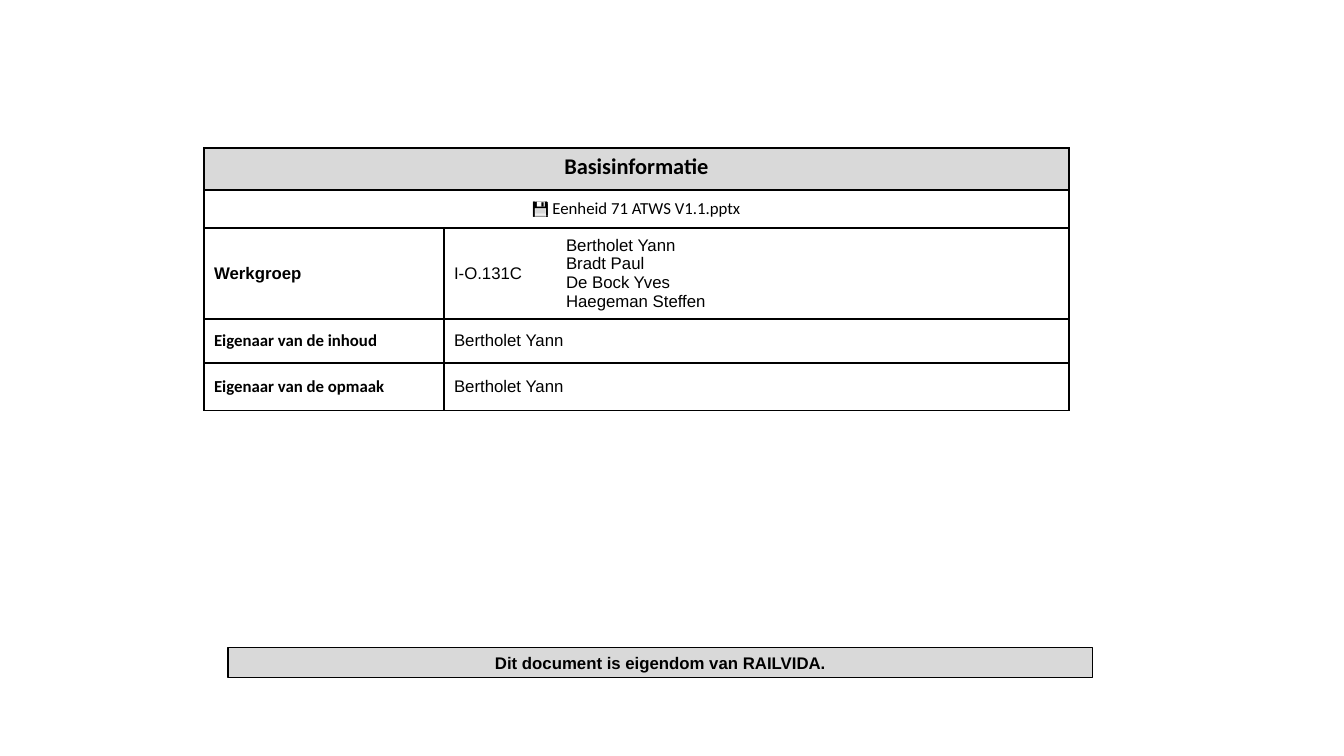
from lxml import etree
from pptx import Presentation
from pptx.dml.color import RGBColor
from pptx.enum.shapes import MSO_SHAPE
from pptx.enum.text import MSO_ANCHOR, PP_ALIGN
from pptx.oxml.ns import qn
from pptx.util import Emu, Pt

EMU_PER_PX = 914400 / 100.8
RECTANGLE = MSO_SHAPE.RECTANGLE
TOP, MIDDLE = MSO_ANCHOR.TOP, MSO_ANCHOR.MIDDLE
LEFT, CENTER = PP_ALIGN.LEFT, PP_ALIGN.CENTER

BLACK, GREY = "000000", "D9D9D9"
ARIAL = {"name": "Arial", "size": Pt(12), "bold": False}
ARIAL_BOLD = {**ARIAL, "bold": True}
CALIBRI = {**ARIAL, "name": "Calibri"}
CALIBRI_BOLD = {**CALIBRI, "bold": True}
HEADING = {**CALIBRI_BOLD, "size": Pt(16)}

COLUMN_WIDTHS = [240, 112, 360, 153]
ROW_HEIGHTS = [42, 38, 91, 44, 48]
FULL_WIDTH_ROWS = 2

# row, column, columns spanned, lines, font, format
CELLS = [
    (0, 0, 4, ["Basisinformatie"], HEADING,
     {"align": CENTER, "anchor": TOP, "fill": GREY}),
    (1, 0, 4, ["💾 Eenheid 71 ATWS V1.1.pptx"], CALIBRI, {"align": CENTER}),
    (2, 0, 1, ["Werkgroep"], ARIAL_BOLD, {}),
    (2, 1, 1, ["I-O.131C"], ARIAL, {}),
    (2, 2, 2, ["Bertholet Yann", "Bradt Paul", "De Bock Yves",
               "Haegeman Steffen"], ARIAL, {}),
    (3, 0, 1, ["Eigenaar van de inhoud"], CALIBRI_BOLD, {"space_after": 6}),
    (3, 1, 2, ["Bertholet Yann"], ARIAL, {}),
    (3, 3, 1, [""], ARIAL, {}),
    (4, 0, 1, ["Eigenaar van de opmaak"], CALIBRI_BOLD, {}),
    (4, 1, 3, ["Bertholet Yann"], ARIAL, {}),
]


def px(length):
    return Emu(round(length * EMU_PER_PX))


def color(hex_string):
    return RGBColor.from_string(hex_string)


class SlideBuilder:
    def __init__(self, slide):
        self.slide = slide

    def add_lines(self, frame, lines, font, align=LEFT, space_after=0):
        for index, line in enumerate(lines):
            para = frame.add_paragraph() if index else frame.paragraphs[0]
            para.alignment = align
            para.space_after = Pt(space_after)
            if not line:
                continue
            span = para.add_run()
            span.text = line
            for name, value in font.items():
                setattr(span.font, name, value)
            span.font.color.rgb = color(BLACK)

    def banner(self, left, top, width, height, text, font):
        box = self.slide.shapes.add_shape(
            RECTANGLE, px(left), px(top), px(width), px(height))
        box.shadow.inherit = False
        box.fill.solid()
        box.fill.fore_color.rgb = color(GREY)
        box.line.color.rgb = color(BLACK)
        box.line.width = Pt(0.75)
        box.text_frame.word_wrap = True
        box.text_frame.vertical_anchor = MIDDLE
        self.add_lines(box.text_frame, [text], font, CENTER)

    def borders(self, cell, visible):
        """Draw the sides named in visible and clear the others."""
        properties = cell._tc.get_or_add_tcPr()
        for side in "LRTB":
            line = etree.SubElement(properties, qn(f"a:ln{side}"), w=str(Pt(1)))
            if side in visible:
                fill = etree.SubElement(line, qn("a:solidFill"))
                etree.SubElement(fill, qn("a:srgbClr"), val=BLACK)
            else:
                etree.SubElement(line, qn("a:noFill"))

    def table(self, left, top, widths, heights, cells):
        table = self.slide.shapes.add_table(
            len(heights), len(widths), px(left), px(top),
            px(sum(widths)), px(sum(heights))).table
        table.first_row = table.horz_banding = False
        for column, width in zip(table.columns, widths):
            column.width = px(width)
        for row, height in zip(table.rows, heights):
            row.height = px(height)
        for row, column, count, lines, font, style in cells:
            self.cells(table, row, column, count, style.get("fill"))
            cell = table.cell(row, column)
            cell.vertical_anchor = style.get("anchor", MIDDLE)
            self.add_lines(cell.text_frame, lines, font,
                           style.get("align", LEFT),
                           style.get("space_after", 0))

    def cells(self, table, row, column, count, fill):
        """Merge a run of cells, then rule and fill each of them."""
        end = column + count
        rules = {0, 4} if row < FULL_WIDTH_ROWS else {0, 1, 4}
        if count > 1:
            table.cell(row, column).merge(table.cell(row, end - 1))
        for index in range(column, end):
            cell = table.cell(row, index)
            right = end if index == column else index + 1
            sides = "TB" + "L" * (index in rules) + "R" * (right in rules)
            self.borders(cell, sides)
            if fill:
                cell.fill.solid()
                cell.fill.fore_color.rgb = color(fill)
            else:
                cell.fill.background()


def main():
    deck = Presentation()
    deck.slide_width, deck.slide_height = px(1344), px(756)
    blank_layout = deck.slide_layouts[6]
    page = SlideBuilder(deck.slides.add_slide(blank_layout))
    page.banner(228, 648, 865, 30,
                "Dit document is eigendom van RAILVIDA.", ARIAL_BOLD)
    page.table(204, 148, COLUMN_WIDTHS, ROW_HEIGHTS, CELLS)
    deck.save("out.pptx")


if __name__ == "__main__":
    main()
